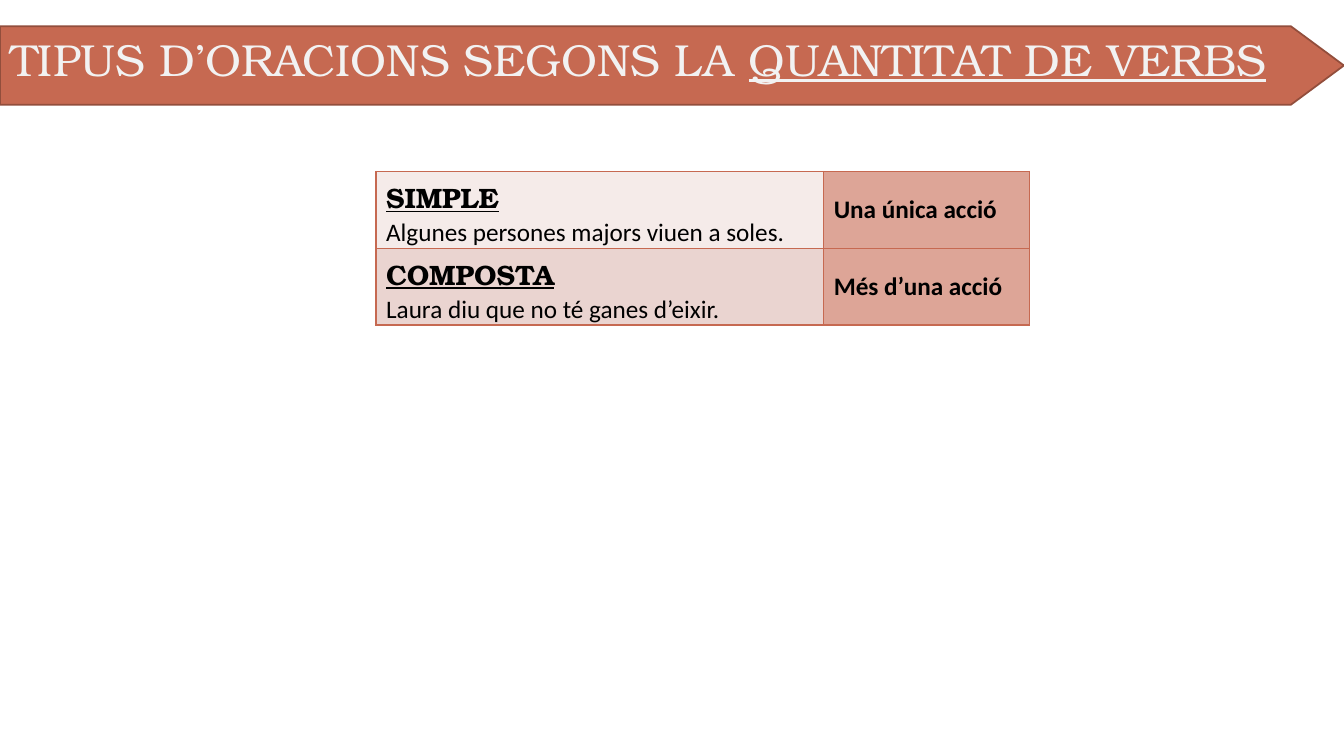
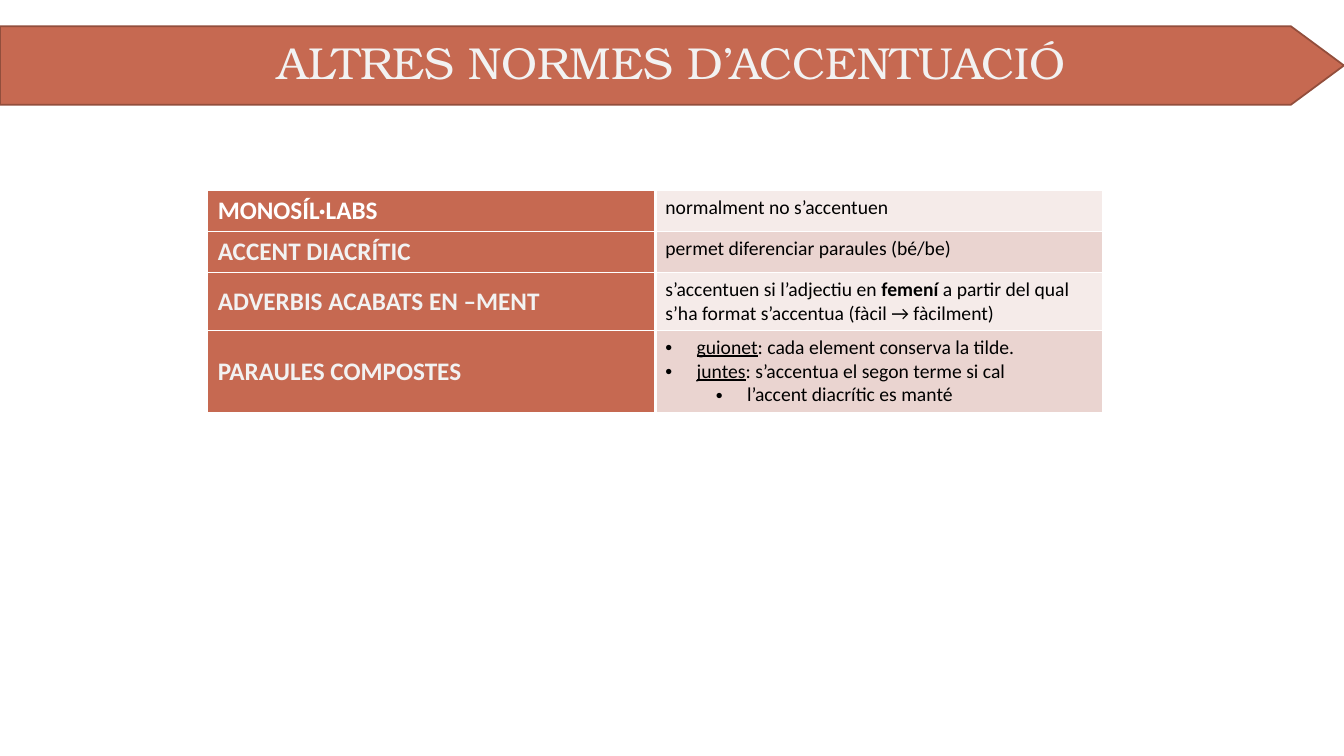
from lxml.etree import SubElement
from pptx import Presentation
from pptx.dml.color import RGBColor
from pptx.enum.shapes import MSO_SHAPE
from pptx.enum.text import MSO_ANCHOR, MSO_AUTO_SIZE, PP_ALIGN
from pptx.oxml import parse_xml
from pptx.oxml.ns import nsdecls, qn
from pptx.util import Inches, Pt

# Shared look
RUST = RGBColor(0xC6, 0x69, 0x51)
EDGE = RGBColor(0x92, 0x4E, 0x3C)
SALMON = RGBColor(0xDD, 0xA5, 0x97)
PALE = RGBColor(0xF5, 0xEB, 0xE9)
PINK = RGBColor(0xEA, 0xD4, 0xD0)
LIGHT = RGBColor(0xF2, 0xF2, 0xF2)
WHITE = RGBColor(0xFF, 0xFF, 0xFF)
BLACK = RGBColor(0, 0, 0)
SERIF, SANS = "TeX Gyre Bonum", "Calibri"

TITLE = dict(name=SERIF, size=Pt(32), bold=False)
HEAD = dict(name=SERIF, size=Pt(20), bold=True, underline=True)
BODY = dict(name=SANS, size=Pt(18), bold=False)
LABEL = BODY | dict(bold=True)
NOTE = BODY | dict(size=Pt(14))
STRONG = NOTE | dict(bold=True)
UNDER = NOTE | dict(underline=True)


def add_run(para, text, style, color):
    run = para.add_run()
    run.text = text
    for key, value in style.items():
        setattr(run.font, key, value)
    run.font.color.rgb = color


def add_band(slide, parts, top, align):
    """Arrow band across the slide, with the title over it."""
    band = slide.shapes.add_shape(
        MSO_SHAPE.PENTAGON, 0, Inches(0.26), Inches(13.33), Inches(0.78))
    band.adjustments[0] = 0.676
    band.shadow.inherit = False
    band.fill.solid()
    band.fill.fore_color.rgb = RUST
    band.line.color.rgb = EDGE
    band.line.width = Pt(1.25)
    slide.shapes._spTree.insert(2, band._element)  # behind the title

    title = slide.shapes.title
    box = dict(left=0, top=Inches(top), width=Inches(13.33), height=Inches(0.64))
    for key, value in box.items():
        setattr(title, key, value)
    frame = title.text_frame
    frame.word_wrap = True
    frame.auto_size = MSO_AUTO_SIZE.NONE
    frame.vertical_anchor = MSO_ANCHOR.TOP
    para = frame.paragraphs[0]
    para.alignment = align
    for text, extra in parts:
        add_run(para, text, TITLE | extra, LIGHT)


def set_edges(cell, color, widths):
    """Cell borders; widths are left, right, top, bottom in points."""
    props = cell._tc.get_or_add_tcPr()
    for spot, (side, width) in enumerate(zip("LRTB", widths)):
        props.insert(spot, parse_xml(
            f'<a:ln{side} {nsdecls("a")} w="{Pt(width)}"><a:solidFill>'
            f'<a:srgbClr val="{color}"/></a:solidFill></a:ln{side}>'))


def set_bullet(para, left):
    props = para._p.get_or_add_pPr()
    props.set("marL", str(Inches(left)))
    props.set("indent", str(-Inches(0.31)))
    SubElement(props, qn("a:buFont"), typeface="Arial")
    SubElement(props, qn("a:buChar"), char="•")


def fill_cell(cell, paras, fill, color=BLACK, middle=False):
    """Each paragraph is a list of (text, style) runs."""
    cell.fill.solid()
    cell.fill.fore_color.rgb = fill
    cell.vertical_anchor = MSO_ANCHOR.MIDDLE if middle else MSO_ANCHOR.TOP
    frame = cell.text_frame
    for spot, runs in enumerate(paras):
        para = frame.add_paragraph() if spot else frame.paragraphs[0]
        for text, style in runs:
            add_run(para, text, style, color)


def add_grid(slide, left, top, cols, rows):
    """Plain table sized by its column widths and row heights."""
    frame = slide.shapes.add_table(
        len(rows), len(cols), Inches(left), Inches(top),
        Inches(sum(cols)), Inches(sum(rows)))
    table = frame.table
    table.first_row = table.horz_banding = False
    for col, width in zip(table.columns, cols):
        col.width = Inches(width)
    for row, height in zip(table.rows, rows):
        row.height = Inches(height)
    return table


def verb_slide(slide):
    add_band(slide, [("TIPUS D’ORACIONS SEGONS LA ", {}),
                     ("QUANTITAT DE VERBS", dict(underline=True))],
             0.26, PP_ALIGN.LEFT)
    rows = [
        ("SIMPLE", "Algunes persones majors viuen a soles.",
         "Una única acció", PALE),
        ("COMPOSTA", "Laura diu que no té ganes d’eixir.",
         "Més d’una acció", PINK),
    ]
    table = add_grid(slide, 3.73, 1.7, [4.44, 2.04], [0.73] * len(rows))
    for spot, (head, sample, count, fill) in enumerate(rows):
        kind, total = table.rows[spot].cells
        fill_cell(kind, [[(head, HEAD)], [(sample, BODY)]], fill)
        kind.margin_bottom = 0
        fill_cell(total, [[(count, LABEL)]], SALMON, middle=True)
        for cell in (kind, total):
            set_edges(cell, RUST, [1] * 4)


def accent_slide(slide):
    add_band(slide, [("ALTRES NORMES D’ACCENTUACIÓ", {})],
             0.29, PP_ALIGN.CENTER)
    rows = [
        ("MONOSÍL·LABS", [[("normalment no s’accentuen", NOTE)]]),
        ("ACCENT DIACRÍTIC",
         [[("permet diferenciar paraules (bé/be)", NOTE)]]),
        ("ADVERBIS ACABATS EN –MENT",
         [[("s’accentuen si l’adjectiu en ", NOTE), ("femení", STRONG),
           (" a partir del qual s’ha format s’accentua (fàcil → fàcilment)",
            NOTE)]]),
        ("PARAULES COMPOSTES",
         [[("guionet", UNDER), (": cada element conserva la tilde.", NOTE)],
          [("juntes", UNDER), (": s’accentua el segon terme si cal", NOTE)],
          [("l’accent diacrític es manté", NOTE)]]),
    ]
    table = add_grid(slide, 2.06, 1.89, [4.44, 4.44], [0.41, 0.4, 0.57, 0.79])
    for spot, (name, rule) in enumerate(rows):
        label, note = table.rows[spot].cells
        fill_cell(label, [[(name, LABEL)]], RUST,
                  LIGHT if spot else WHITE, middle=True)
        fill_cell(note, rule, PINK if spot % 2 else PALE)
        set_edges(label, WHITE, [1, 2.25, 1, 1])
        set_edges(note, WHITE, [2.25, 1, 1, 1])

    # Bulleted rules for compound words
    paras = note.text_frame.paragraphs
    paras[2].level = 1
    for para, left in zip(paras, [0.31, 0.31, 0.81]):
        set_bullet(para, left)


def main():
    deck = Presentation()
    deck.slide_width, deck.slide_height = Inches(13.33), Inches(7.5)
    for build in (verb_slide, accent_slide):
        build(deck.slides.add_slide(deck.slide_layouts[5]))
    deck.save("out.pptx")


if __name__ == "__main__":
    main()
